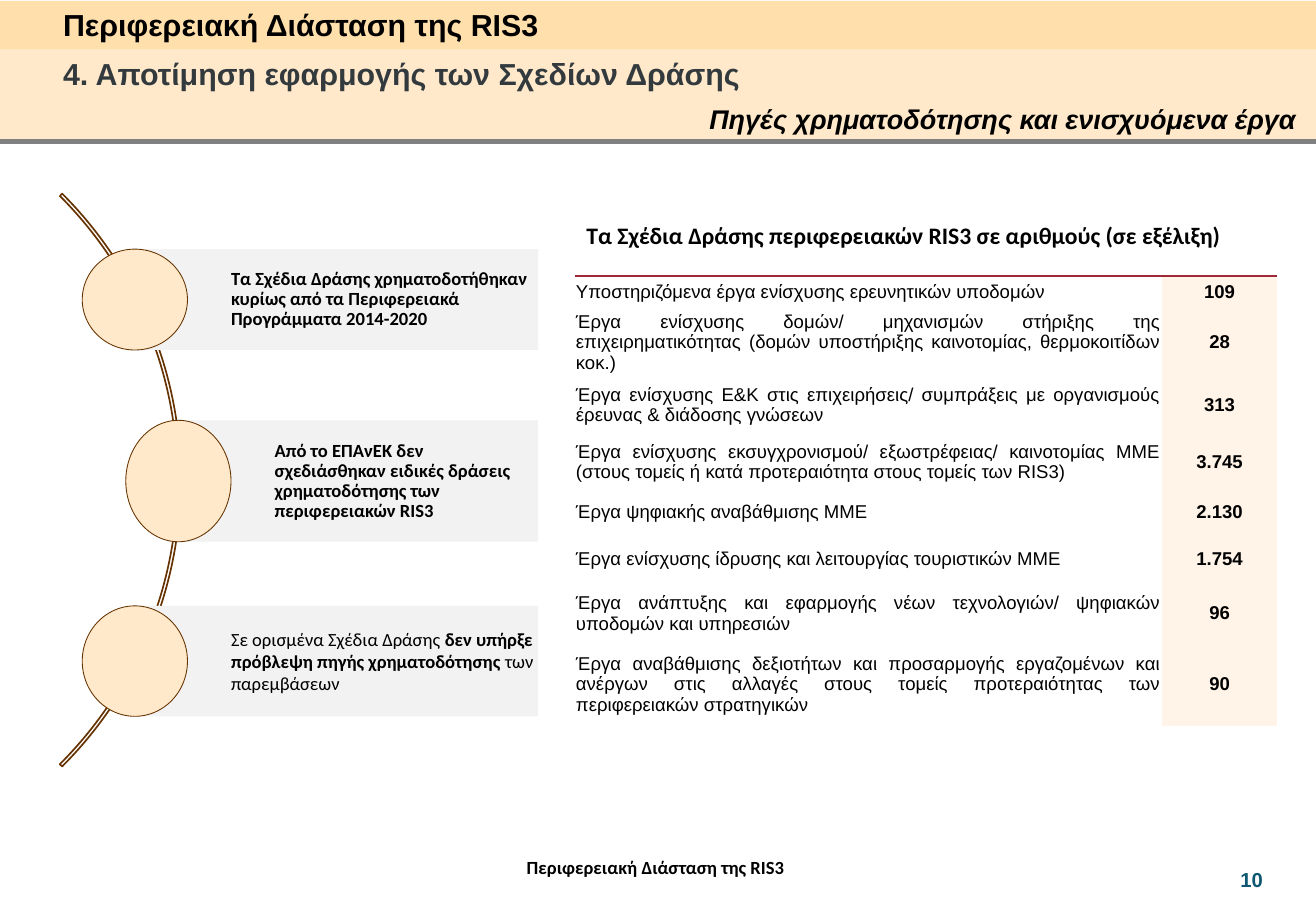
from lxml import etree
from pptx import Presentation
from pptx import util as u
from pptx.dml.color import RGBColor
from pptx.enum import shapes, text
from pptx.oxml import ns

COLORS = {
    "band_dark": "FFDFAB", "band_light": "FFE9CA", "rule": "808080",
    "black": "000000", "subtitle": "333A3E", "page": "0E5772",
    "card": "F2F2F2", "brown": "663300", "number": "FFF4E7", "border": "9F2936",
}
NO_STYLE = "{2D5ABB26-0587-4C30-8999-92F81FD0307C}"
ALIGN = text.PP_PARAGRAPH_ALIGNMENT
TOPIC = "Περιφερειακή Διάσταση της RIS3"

# (left, top, width, height) in cm, then runs as (wording, bold), then line spacing
CARDS = [
    ((2.82, 5.21, 8.43, 2.11),
     [("Τα Σχέδια Δράσης χρηματοδοτήθηκαν κυρίως από τα Περιφερειακά "
       "Προγράμματα 2014-2020", True)], 0.9),
    ((3.73, 8.79, 7.52, 2.54),
     [("Από το ΕΠΑνΕΚ δεν σχεδιάσθηκαν ειδικές δράσεις χρηματοδότησης των "
       "περιφερειακών RIS3", True)], 0.9),
    ((2.82, 12.67, 8.43, 2.31),
     [("Σε ορισμένα Σχέδια Δράσης ", False),
      ("δεν υπήρξε πρόβλεψη πηγής χρηματοδότησης", True),
      (" των παρεμβάσεων", False)], 1.0),
]

# (row height in cm, kind of project, count)
PROJECTS = [
    (0.66, "Υποστηριζόμενα έργα ενίσχυσης ερευνητικών υποδομών", "109"),
    (1.19, "Έργα ενίσχυσης δομών/ μηχανισμών στήριξης της επιχειρηματικότητας "
           "(δομών υποστήριξης καινοτομίας, θερμοκοιτίδων κοκ.)", "28"),
    (1.19, "Έργα ενίσχυσης Ε&Κ στις επιχειρήσεις/ συμπράξεις με οργανισμούς "
           "έρευνας & διάδοσης γνώσεων", "313"),
    (1.19, "Έργα ενίσχυσης εκσυγχρονισμού/ εξωστρέφειας/ καινοτομίας ΜΜΕ "
           "(στους τομείς ή κατά προτεραιότητα στους τομείς των RIS3)", "3.745"),
    (0.89, "Έργα ψηφιακής αναβάθμισης ΜΜΕ", "2.130"),
    (1.09, "Έργα ενίσχυσης ίδρυσης και λειτουργίας τουριστικών ΜΜΕ", "1.754"),
    (1.19, "Έργα ανάπτυξης και εφαρμογής νέων τεχνολογιών/ ψηφιακών υποδομών "
           "και υπηρεσιών", "96"),
    (1.78, "Έργα αναβάθμισης δεξιοτήτων και προσαρμογής εργαζομένων και ανέργων "
           "στις αλλαγές στους τομείς προτεραιότητας των περιφερειακών "
           "στρατηγικών", "90"),
]


def rgb(name):
    return RGBColor.from_string(COLORS[name])


def cm(*values):
    return [u.Cm(v) for v in values]


def add_run(p, words, size, font="Arial", color="black", bold=True, italic=False):
    r = p.add_run()
    r.text = words
    r.font.size = u.Pt(size)
    r.font.name = font
    r.font.bold = bold
    r.font.italic = italic
    r.font.color.rgb = rgb(color)


def add_label(s, box, words, size, align=ALIGN.LEFT, wrap=True, inset=None, **style):
    tf = s.shapes.add_textbox(*cm(*box)).text_frame
    tf.word_wrap = wrap
    if not wrap:
        tf.auto_size = text.MSO_AUTO_SIZE.SHAPE_TO_FIT_TEXT
    if inset is not None:
        set_insets(tf, inset, inset, inset, inset)
    p = tf.paragraphs[0]
    p.alignment = align
    add_run(p, words, size, **style)


def set_insets(target, left, top, right, bottom):
    target.margin_left, target.margin_top = cm(left, top)
    target.margin_right, target.margin_bottom = cm(right, bottom)


def add_form(s, kind, box, fill=None, line=None, weight=1):
    sp = s.shapes.add_shape(kind, *cm(*box))
    sp.shadow.inherit = False
    if fill:
        sp.fill.solid()
        sp.fill.fore_color.rgb = rgb(fill)
    else:
        sp.fill.background()
    if line:
        sp.line.color.rgb = rgb(line)
        sp.line.width = u.Pt(weight)
    else:
        sp.line.fill.background()
    return sp


def add_header(s, x, y, w, h):
    # Two bands closed by a grey rule
    split = 1.02
    rect = shapes.MSO_SHAPE.RECTANGLE
    add_form(s, rect, (x, y + 0.02, w, split), "band_dark")
    add_form(s, rect, (x, y + split + 0.02, w, h - split - 0.02), "band_light")
    rule = s.shapes.add_connector(shapes.MSO_CONNECTOR.STRAIGHT,
                                  *cm(x, y + h, x + w, y + h))
    rule.line.color.rgb = rgb("rule")
    rule.line.width = u.Pt(3)
    etree.SubElement(rule._element.spPr, ns.qn("a:effectLst"))
    # Titles
    add_label(s, (x + 1.07, y, 10.74, split), TOPIC, 18, wrap=False)
    add_label(s, (x + 1.07, y + split, 15.16, split),
              "4. Αποτίμηση εφαρμογής των Σχεδίων Δράσης", 18,
              wrap=False, color="subtitle")
    add_label(s, (x + 14.58, y + 2.01, 12.88, 0.94),
              "Πηγές χρηματοδότησης και ενισχυόμενα έργα", 16, italic=True)


def add_card(s, x, y, w, h, runs, spacing):
    card = add_form(s, shapes.MSO_SHAPE.RECTANGLE, (x, y, w, h), "card")
    tf = card.text_frame
    tf.word_wrap = True
    tf.vertical_anchor = text.MSO_ANCHOR.MIDDLE
    set_insets(tf, 2.01, 0.08, 0.08, 0.08)
    p = tf.paragraphs[0]
    p.alignment = ALIGN.LEFT
    p.line_spacing = spacing
    for words, bold in runs:
        add_run(p, words, 11, "Calibri", bold=bold)
    # Disc centred on the card's left edge
    disc = 2.2
    add_form(s, shapes.MSO_SHAPE.OVAL, (x - disc / 2, y, disc, h),
             "band_light", "brown", 0.5)


def add_funding_cards(s, x, y, size):
    # Thin arc behind the cards
    arc = add_form(s, shapes.MSO_SHAPE.BLOCK_ARC, (x, y, size, size), line="brown")
    for i, value in enumerate((189, 27, 0.004)):
        arc.adjustments[i] = value
    for box, runs, spacing in CARDS:
        add_card(s, *box, runs, spacing)


def add_top_border(cell):
    ln = etree.SubElement(cell._tc.get_or_add_tcPr(), ns.qn("a:lnT"), w="12700")
    fill = etree.SubElement(ln, ns.qn("a:solidFill"))
    etree.SubElement(fill, ns.qn("a:srgbClr"), val=COLORS["border"])


def fill_cell(cell, words, align, bold):
    cell.vertical_anchor = text.MSO_ANCHOR.MIDDLE
    set_insets(cell, 0.03, 0.03, 0.03, 0)
    p = cell.text_frame.paragraphs[0]
    p.alignment = align
    add_run(p, words, 11, bold=bold)


def add_projects(s, x, y, w):
    add_label(s, (x, y, 13.82, 0.86),
              "Τα Σχέδια Δράσης περιφερειακών RIS3 σε αριθμούς (σε εξέλιξη)",
              14, font="Calibri")
    # Table of project counts
    height = sum(row[0] for row in PROJECTS)
    table = s.shapes.add_table(len(PROJECTS), 2, *cm(x, y + 1.27, w, height)).table
    table.first_row = table.horz_banding = False
    table._tbl.tblPr.find(ns.qn("a:tableStyleId")).text = NO_STYLE
    count_width = 2.41
    table.columns[0].width, table.columns[1].width = cm(w - count_width, count_width)
    for i, (row_height, project, count) in enumerate(PROJECTS):
        table.rows[i].height = u.Cm(row_height)
        name_cell, count_cell = table.cell(i, 0), table.cell(i, 1)
        fill_cell(name_cell, project, ALIGN.JUSTIFY, False)
        fill_cell(count_cell, count, ALIGN.CENTER, True)
        if i == 0:
            add_top_border(name_cell)
            add_top_border(count_cell)
        name_cell.fill.background()
        count_cell.fill.solid()
        count_cell.fill.fore_color.rgb = rgb("number")


def add_footer(s, x, y):
    add_label(s, (x, y, 13.18, 0.97), TOPIC + " ", 11, ALIGN.CENTER,
              inset=0, font="Calibri")
    add_label(s, (x + 18.52, y + 0.1, 1.32, 0.76), "10", 12, color="page")


def main():
    prs = Presentation()
    prs.slide_width, prs.slide_height = cm(27.51, 19.05)
    s = prs.slides.add_slide(prs.slide_layouts[6])
    add_footer(s, 7.16, 17.91)
    add_header(s, 0, 0, 27.51, 2.95)
    add_funding_cards(s, -13.16, 1.57, 16.94)
    add_projects(s, 12.01, 4.5, 14.69)
    prs.save("out.pptx")


if __name__ == "__main__":
    main()
